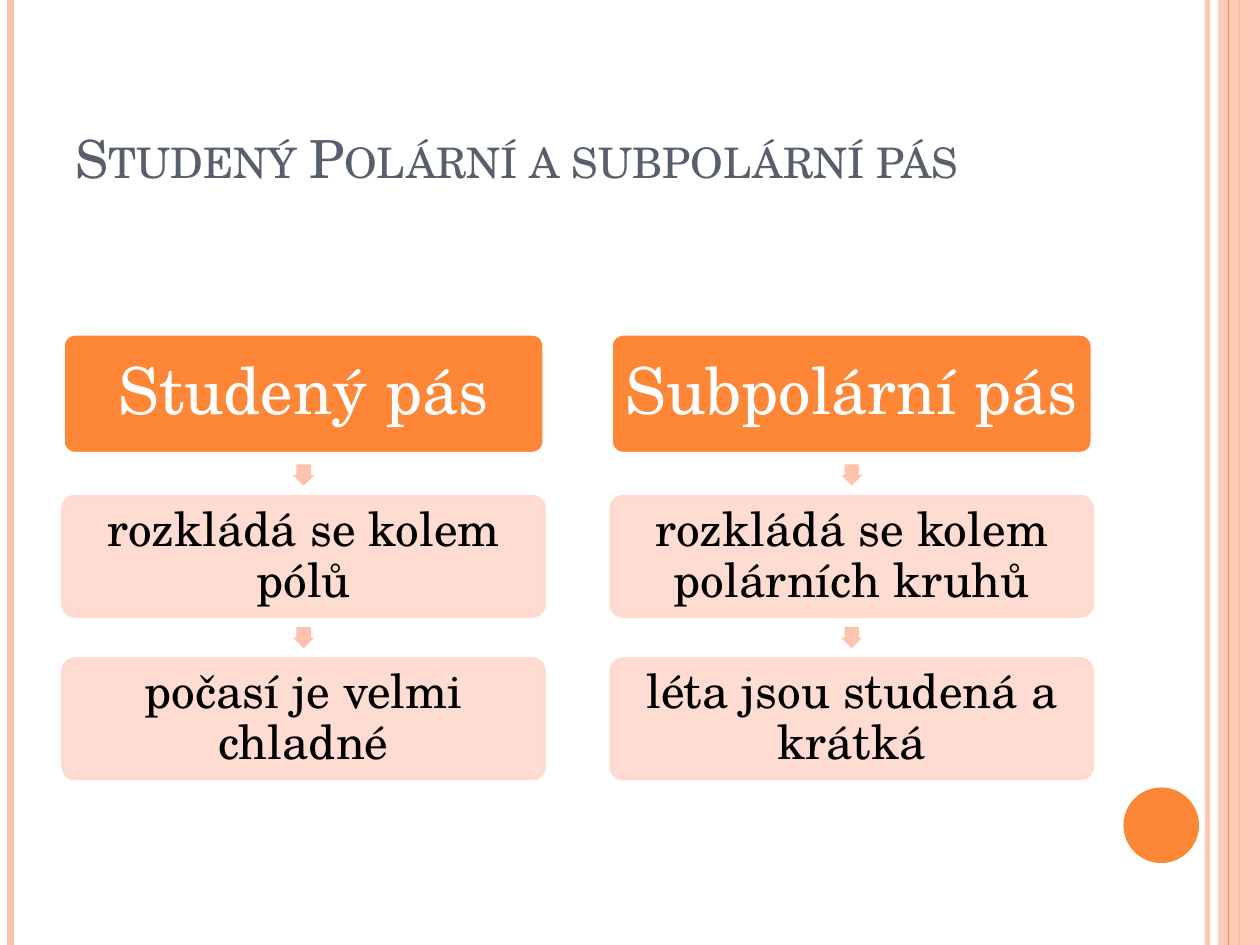
import pptx
import pptx.dml.color
import pptx.enum.shapes
import pptx.enum.text
import pptx.oxml.ns
import pptx.oxml.xmlchemy
import pptx.util
from lxml import etree

Pt = pptx.util.Pt
RGBColor = pptx.dml.color.RGBColor
SHAPES = pptx.enum.shapes.MSO_SHAPE
ANCHOR = pptx.enum.text.MSO_ANCHOR
ALIGN = pptx.enum.text.PP_ALIGN
qn = pptx.oxml.ns.qn

FONT = "TeX Gyre Schola"
ORANGE = RGBColor(0xFE, 0x86, 0x37)
PEACH = RGBColor(0xFE, 0xC3, 0xAE)
PALE_PEACH = RGBColor(0xFF, 0xD9, 0xCE)
SLATE = RGBColor(0x57, 0x5F, 0x6D)
WHITE = RGBColor(0xFF, 0xFF, 0xFF)
BLACK = RGBColor(0, 0, 0)

WIDTH, HEIGHT = 720, 540
BOX_HEIGHT, BOX_GAP, ARROW_SIZE = 68.4, 24.48, 12.24

COLUMNS = [
    ("Studený pás", ["rozkládá se kolem pólů", "počasí je velmi chladné"]),
    ("Subpolární pás", ["rozkládá se kolem polárních kruhů", "léta jsou studená a krátká"]),
]


def set_opacity(shape, percent):
    """Give every colour of the shape's fill and line the same opacity."""
    for color in shape._element.spPr.iter(qn("a:srgbClr")):
        etree.SubElement(color, qn("a:alpha")).set("val", str(percent * 1000))


def add_shape(slide, kind, left, top, width, height, fill, line=None, opacity=100):
    shape = slide.shapes.add_shape(kind, Pt(left), Pt(top), Pt(width), Pt(height))
    shape.shadow.inherit = False
    shape.fill.solid()
    shape.fill.fore_color.rgb = fill
    if line is None:
        shape.line.fill.background()
    else:
        shape.line.color.rgb = line
        shape.line.width = Pt(2)
    if opacity < 100:
        set_opacity(shape, opacity)
    return shape


def add_vertical_line(slide, x, color, weight, opacity=100):
    line = slide.shapes.add_connector(
        pptx.enum.shapes.MSO_CONNECTOR.STRAIGHT, Pt(x), Pt(0), Pt(x), Pt(HEIGHT))
    line.line.color.rgb = color
    line.line.width = Pt(weight)
    if opacity < 100:
        set_opacity(line, opacity)
    etree.SubElement(line._element.spPr, qn("a:effectLst"))


def write_text(shape, text, size, color, align=ALIGN.LEFT, anchor=ANCHOR.MIDDLE,
               margins=(7.2, 3.6), line_spacing=1.0, small_caps=False):
    frame = shape.text_frame
    frame.word_wrap = True
    frame.vertical_anchor = anchor
    frame.margin_left = frame.margin_right = Pt(margins[0])
    frame.margin_top = frame.margin_bottom = Pt(margins[1])
    paragraph = frame.paragraphs[0]
    paragraph.alignment = align
    paragraph.line_spacing = line_spacing
    run = paragraph.add_run()
    run.text = text
    run.font.name = FONT
    run.font.size = Pt(size)
    run.font.color.rgb = color
    if small_caps:
        run.font._element.set("cap", "small")


def add_frame(slide):
    """Stripes along both edges and the disc at the lower right."""
    add_vertical_line(slide, 690, PEACH, 3, opacity=93)
    add_vertical_line(slide, 6, PEACH, 4.5)
    add_vertical_line(slide, 708, ORANGE, 1.5)
    add_shape(slide, SHAPES.RECTANGLE, 696, 0, WIDTH - 696, HEIGHT, PEACH, opacity=87)
    add_vertical_line(slide, 702, ORANGE, 0.75)
    add_shape(slide, SHAPES.OVAL, 642, 450, 43.2, 43.2, ORANGE)


def add_title(slide, left, top, width, height):
    box = slide.shapes.add_textbox(Pt(left), Pt(top), Pt(width), Pt(height))
    write_text(box, "Studený Polární a subpolární pás", 30, SLATE,
               anchor=ANCHOR.BOTTOM, small_caps=True)


def add_column(slide, left, top, width, heading, facts):
    """A heading box with fact boxes below it, joined by small arrows."""
    # Heading
    box = add_shape(slide, SHAPES.ROUNDED_RECTANGLE, left, top, width, BOX_HEIGHT,
                    ORANGE, line=WHITE)
    box.adjustments[0] = 0.1
    write_text(box, heading, 37, WHITE, align=ALIGN.CENTER, margins=(1.5, 1.5),
               line_spacing=0.9)

    for index, fact in enumerate(facts, start=1):
        box_top = top + index * (BOX_HEIGHT + BOX_GAP)
        # Arrow centred in the gap above the box
        arrow = add_shape(slide, SHAPES.RIGHT_ARROW, left + (width - ARROW_SIZE) / 2,
                          box_top - (BOX_GAP + ARROW_SIZE) / 2,
                          ARROW_SIZE, ARROW_SIZE, PEACH)
        arrow.rotation = 90
        arrow.adjustments[0] = 0.67
        # Fact
        box = add_shape(slide, SHAPES.ROUNDED_RECTANGLE, left, box_top, width, BOX_HEIGHT,
                        PALE_PEACH, line=PALE_PEACH, opacity=90)
        box.adjustments[0] = 0.1
        write_text(box, fact, 27, BLACK, align=ALIGN.CENTER, margins=(1, 1),
                   line_spacing=0.9)


def main():
    presentation = pptx.Presentation()
    presentation.slide_width = Pt(WIDTH)
    presentation.slide_height = Pt(HEIGHT)
    slide = presentation.slides.add_slide(presentation.slide_layouts[6])

    add_frame(slide)
    add_title(slide, 36, 21.6, 588, 90)
    for index, (heading, facts) in enumerate(COLUMNS):
        add_column(slide, 36 + index * 313.2, 190.8, 275, heading, facts)

    presentation.save("out.pptx")


if __name__ == "__main__":
    main()
